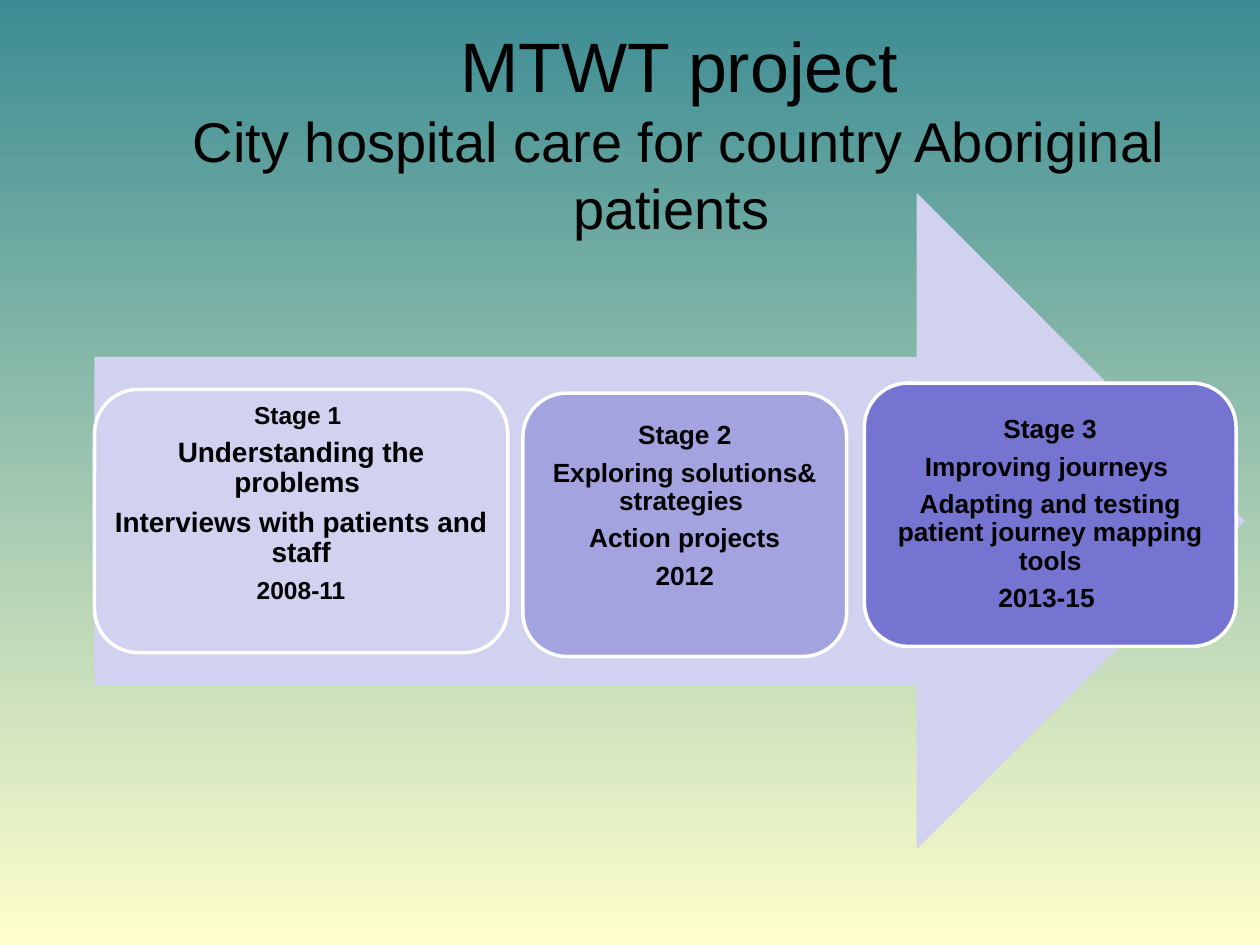
from pptx import Presentation
from pptx.dml.color import RGBColor
from pptx.enum.shapes import MSO_SHAPE
from pptx.enum.text import MSO_ANCHOR, MSO_AUTO_SIZE, PP_ALIGN
from pptx.util import Inches, Pt

COLORS = {
    "sky": "3C8C93",
    "sand": "FFFFCC",
    "arrow": "D1D1F0",
    "stage1": "D1D1F0",
    "stage2": "A3A3E0",
    "stage3": "7575D1",
    "edge": "FFFFFF",
    "text": "000000",
}

STAGES = [
    ("stage1", (0.75, 3.09, 3.28, 2.09), 0.33,
     [("Stage 1 ", 14), ("Understanding the problems ", 16),
      ("Interviews with patients and staff", 16), ("2008-11", 14)]),
    ("stage2", (4.15, 3.12, 2.57, 2.09), 0.35,
     [("Stage 2", 15), ("Exploring solutions& strategies ", 15),
      ("Action projects", 15), ("2012", 15)]),
    ("stage3", (6.86, 3.04, 2.95, 2.09), 0.06,
     [("Stage 3", 15), ("Improving journeys ", 15),
      ("Adapting and testing patient journey mapping tools", 15),
      ("2013-15 ", 15)]),
]


def rgb(name):
    """Return the named colour."""
    return RGBColor.from_string(COLORS[name])


def set_attrs(obj, **values):
    """Set each given attribute on an object."""
    for name, value in values.items():
        setattr(obj, name, value)


def add_run(p, text, size, bold=False):
    """Append a formatted run to a paragraph."""
    r = p.add_run()
    r.text = text
    set_attrs(r.font, name="Arial", size=Pt(size), bold=bold)
    r.font.color.rgb = rgb("text")


def set_background(s):
    """Fill the slide with a gradient from top to bottom."""
    fill = s.background.fill
    fill.gradient()
    fill.gradient_angle = 270
    for stop, name, position in zip(fill.gradient_stops, ("sky", "sand"), (0, 1)):
        stop.color.rgb = rgb(name)
        stop.position = position


def add_title(s, box):
    """Place the two-part title in its placeholder."""
    sp = s.shapes.title
    left, top, width, height = map(Inches, box)
    set_attrs(sp, left=left, top=top, width=width, height=height)
    tf = sp.text_frame
    set_attrs(tf, word_wrap=True, auto_size=MSO_AUTO_SIZE.NONE,
              vertical_anchor=MSO_ANCHOR.MIDDLE)
    p = tf.paragraphs[0]
    p.alignment = PP_ALIGN.CENTER
    add_run(p, "MTWT project", 40)
    p.add_line_break()
    add_run(p, "City hospital care for country Aboriginal patients ", 32)


def add_block(s, kind, box, color):
    """Add a filled shape without a line or shadow."""
    sp = s.shapes.add_shape(kind, *map(Inches, box))
    sp.shadow.inherit = False
    sp.fill.solid()
    sp.fill.fore_color.rgb = rgb(color)
    sp.line.fill.background()
    return sp


def add_stage(s, color, box, bottom, lines):
    """Add one rounded stage card with its centred lines."""
    sp = add_block(s, MSO_SHAPE.ROUNDED_RECTANGLE, box, color)
    sp.line.color.rgb = rgb("edge")
    sp.line.width = Pt(2)
    tf = sp.text_frame
    inset = Inches(0.06)
    set_attrs(tf, word_wrap=True, vertical_anchor=MSO_ANCHOR.MIDDLE,
              margin_left=inset, margin_right=inset, margin_top=inset,
              margin_bottom=Inches(bottom))
    for i, (text, size) in enumerate(lines):
        p = tf.add_paragraph() if i else tf.paragraphs[0]
        set_attrs(p, alignment=PP_ALIGN.CENTER, line_spacing=0.9,
                  space_after=Pt(round(size * 0.35, 1)))
        add_run(p, text, size, bold=True)


def add_process(s, box):
    """Add the large arrow and the stages lying on it."""
    add_block(s, MSO_SHAPE.RIGHT_ARROW, box, "arrow")
    for stage in STAGES:
        add_stage(s, *stage)


def main():
    """Build and save the slide."""
    prs = Presentation()
    set_attrs(prs, slide_width=Inches(10), slide_height=Inches(7.5))
    s = prs.slides.add_slide(prs.slide_layouts[5])
    set_background(s)
    add_title(s, (0.89, 0.58, 9, 0.93))
    add_process(s, (0.75, 1.53, 9.13, 5.21))
    prs.save("out.pptx")


if __name__ == "__main__":
    main()
